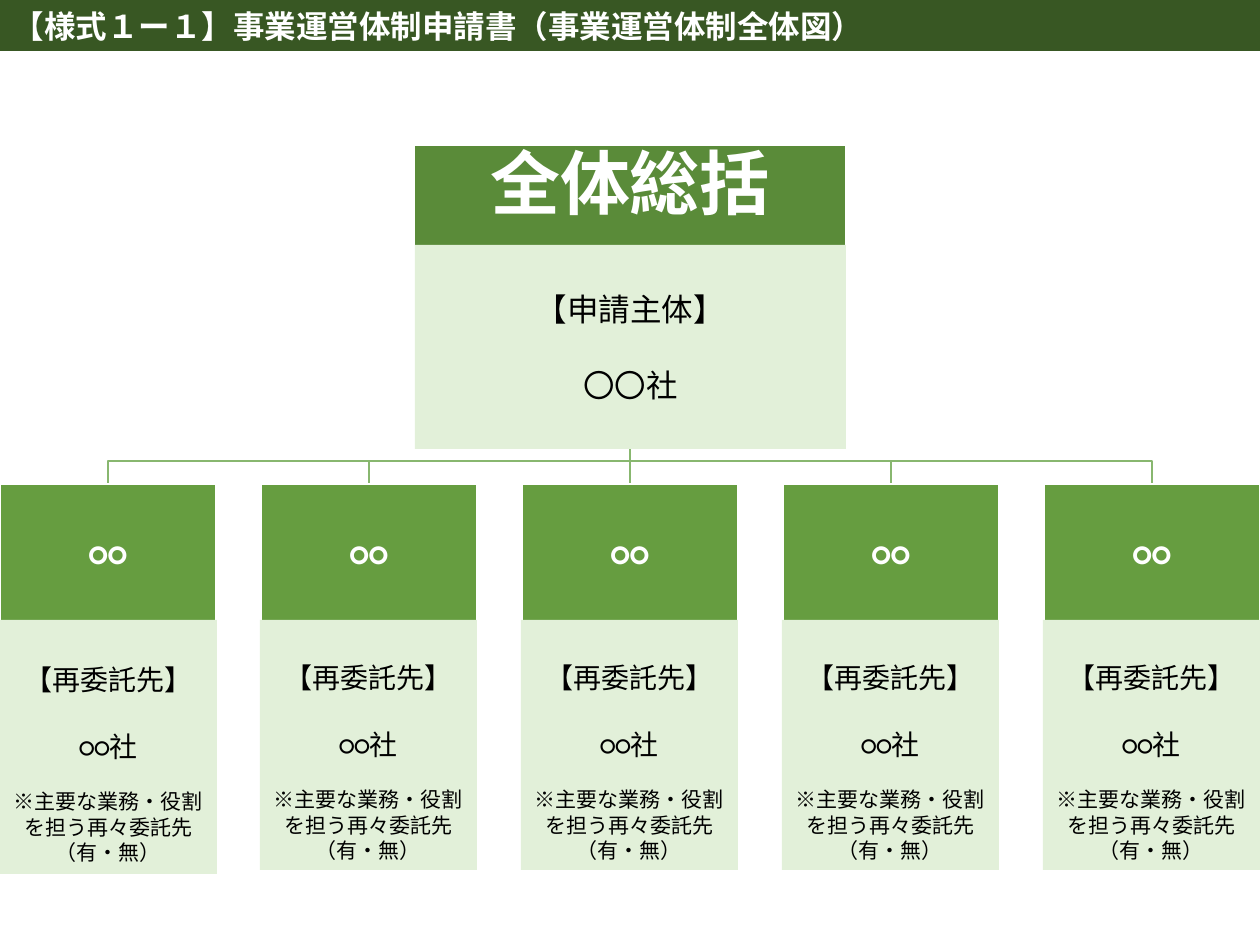
from dataclasses import dataclass

from lxml import etree
from pptx import Presentation
from pptx import util as u
from pptx.dml.color import RGBColor
from pptx.enum import shapes, text
from pptx.oxml.ns import qn

PX = 914400 // 126  # EMU per px
SLIDE_W, SLIDE_H = 1260, 945
PARTNERS = 5


@dataclass(frozen=True)
class Theme:
    font: str = "Calibri"
    banner: str = "385723"
    lead: str = "5A8B39"
    partner: str = "669D40"
    panel: str = "E2F0D9"
    link: str = "88B76F"
    white: str = "FFFFFF"
    black: str = "000000"
    lead_size: int = 40
    head_size: int = 20
    title_size: int = 18
    panel_size: int = 16
    note_size: int = 12


@dataclass(frozen=True)
class Line:
    wording: str
    size: int
    color: str = "000000"
    bold: bool = False
    before: int = 0
    spacing: float = 1.0
    align: text.PP_ALIGN = text.PP_ALIGN.CENTER


@dataclass(frozen=True)
class Box:
    left: int
    top: int
    width: int
    height: int
    fill: str
    lines: tuple
    border: str = ""
    anchor: text.MSO_ANCHOR = text.MSO_ANCHOR.MIDDLE
    side_inset: int = 13
    top_inset: int = 6
    bottom_inset: int = 6


THEME = Theme()


def apply_format(target, values: dict) -> None:
    for name, value in values.items():
        setattr(target, name, value)


def write_lines(frame, box: Box) -> None:
    apply_format(frame, {
        "word_wrap": True,
        "auto_size": text.MSO_AUTO_SIZE.NONE,
        "vertical_anchor": box.anchor,
        "margin_left": box.side_inset * PX,
        "margin_right": box.side_inset * PX,
        "margin_top": box.top_inset * PX,
        "margin_bottom": box.bottom_inset * PX,
    })
    for index, line in enumerate(box.lines):
        paragraph = frame.add_paragraph() if index else frame.paragraphs[0]
        apply_format(paragraph, {
            "alignment": line.align,
            "line_spacing": line.spacing,
            "space_before": u.Pt(line.before),
        })
        run = paragraph.add_run()
        run.text = line.wording
        apply_format(run.font, {
            "name": THEME.font, "size": u.Pt(line.size), "bold": line.bold,
        })
        run.font.color.rgb = RGBColor.from_string(line.color)
        # East Asian characters take the same font
        east_asian = etree.SubElement(run.font._element, qn("a:ea"))
        east_asian.set("typeface", THEME.font)


def draw_box(slide, box: Box) -> None:
    shape = slide.shapes.add_shape(
        shapes.MSO_SHAPE.RECTANGLE,
        *(n * PX for n in (box.left, box.top, box.width, box.height)))
    shape.shadow.inherit = False
    shape.fill.solid()
    shape.fill.fore_color.rgb = RGBColor.from_string(box.fill)
    if box.border:
        shape.line.color.rgb = RGBColor.from_string(box.border)
        shape.line.width = u.Pt(1)
    else:
        shape.line.fill.background()
    write_lines(shape.text_frame, box)


def draw_branch(slide, center: int) -> None:
    trunk, start, bend, end = SLIDE_W // 2, 438, 461, 484
    if center == trunk:
        branch = slide.shapes.add_connector(
            shapes.MSO_CONNECTOR.STRAIGHT,
            *(n * PX for n in (trunk, start, trunk, end)))
        etree.SubElement(branch._element.spPr, qn("a:effectLst"))
    else:
        builder = slide.shapes.build_freeform(trunk, start, scale=PX)
        builder.add_line_segments(
            [(trunk, bend), (center, bend), (center, end)], close=False)
        branch = builder.convert_to_shape()
        branch.fill.background()
        branch.shadow.inherit = False
    branch.line.color.rgb = RGBColor.from_string(THEME.link)
    branch.line.width = u.Pt(1)


def spread(index: int, width: int) -> int:
    """Left edge of a column when all columns fill the slide width."""
    return (SLIDE_W - width) * index // (PARTNERS - 1)


def draw_banner(slide) -> None:
    banner = Box(0, 0, SLIDE_W, 51, THEME.banner, (
        Line("【様式１ー１】事業運営体制申請書（事業運営体制全体図）",
             THEME.title_size, THEME.white, True, align=text.PP_ALIGN.LEFT),))
    title = slide.shapes.title
    apply_format(title, {
        name: getattr(banner, name) * PX
        for name in ("left", "top", "width", "height")})
    title.fill.solid()
    title.fill.fore_color.rgb = RGBColor.from_string(banner.fill)
    write_lines(title.text_frame, banner)


def main() -> None:
    prs = Presentation()
    apply_format(prs, {"slide_width": SLIDE_W * PX,
                       "slide_height": SLIDE_H * PX})
    slide = prs.slides.add_slide(prs.slide_layouts[5])
    draw_banner(slide)

    # Branches from the lead to each subcontractor
    head_w, panel_w = 216, 217
    for index in range(PARTNERS):
        draw_branch(slide, spread(index, head_w) + head_w // 2)

    # Lead organisation
    top = text.MSO_ANCHOR.TOP
    draw_box(slide, Box(414, 145, 432, 293, THEME.lead, (
        Line("全体総括", THEME.lead_size, THEME.white, True, spacing=0.9),),
        THEME.white, top, 4, 4, 4))
    draw_box(slide, Box(415, 245, 431, 204, THEME.panel, (
        Line("【申請主体】", THEME.title_size),
        Line("〇〇社", THEME.title_size, before=22))))

    # Subcontractors
    panel_lines = (
        Line("【再委託先】", THEME.panel_size),
        Line("○○社", THEME.panel_size, before=19),
        Line("※主要な業務・役割を担う再々委託先", THEME.note_size, before=15),
        Line("（有・無）", THEME.note_size),
    )
    for index in range(PARTNERS):
        draw_box(slide, Box(
            spread(index, head_w), 484, head_w, 314, THEME.partner,
            (Line("○○", THEME.head_size, THEME.white, True, spacing=0.9),),
            THEME.white, top, 1, 52, 1))
        draw_box(slide, Box(
            spread(index, panel_w), 620, panel_w, 250 if index else 254,
            THEME.panel, panel_lines, top_inset=39))

    prs.save("out.pptx")


if __name__ == "__main__":
    main()
